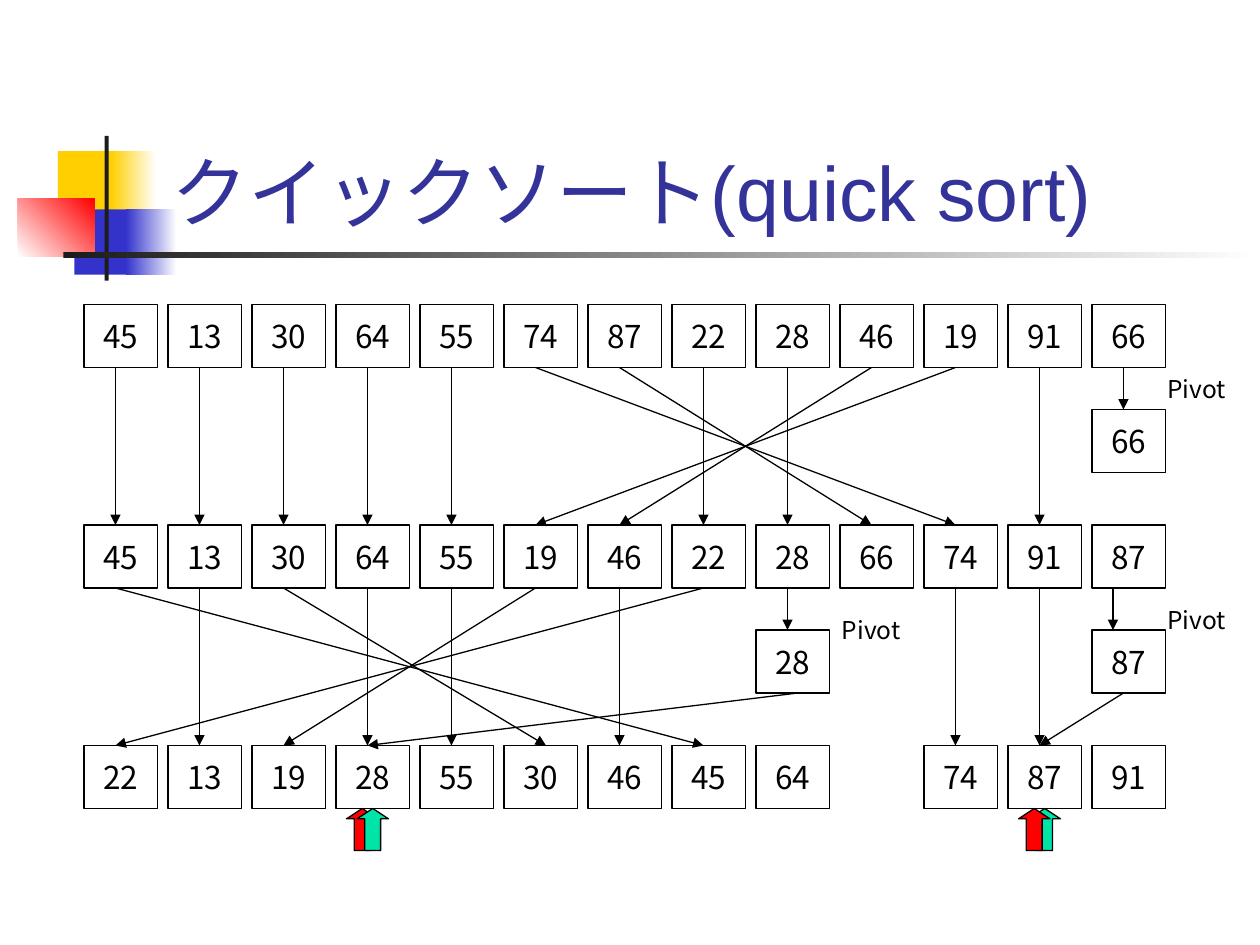
from lxml import etree
from pptx import Presentation
from pptx.dml.color import RGBColor
from pptx.enum.shapes import MSO_CONNECTOR, MSO_SHAPE
from pptx.enum.text import MSO_ANCHOR, MSO_AUTO_SIZE, PP_ALIGN
from pptx.oxml.ns import qn
from pptx.util import Cm, Pt

RECTANGLE = MSO_SHAPE.RECTANGLE
UP_ARROW = MSO_SHAPE.UP_ARROW
STRAIGHT = MSO_CONNECTOR.STRAIGHT
MIDDLE, BOTTOM = MSO_ANCHOR.MIDDLE, MSO_ANCHOR.BOTTOM
LEFT, CENTER = PP_ALIGN.LEFT, PP_ALIGN.CENTER
NO_AUTOFIT, FIT_SHAPE = MSO_AUTO_SIZE.NONE, MSO_AUTO_SIZE.SHAPE_TO_FIT_TEXT

THEME = {
    "title_font": "Arial",
    "body_font": "Noto Sans CJK JP",
    "title_size": Pt(44),
    "number_size": Pt(18),
    "label_size": Pt(14),
    "line_width": Pt(0.75),
    "title": RGBColor.from_string("333399"),
    "ink": RGBColor.from_string("000000"),
    "white": RGBColor.from_string("FFFFFF"),
    "yellow": RGBColor.from_string("FFCF01"),
    "blue": RGBColor.from_string("3333CC"),
    "red": RGBColor.from_string("FF0000"),
    "green": RGBColor.from_string("00E4A8"),
    "bar": RGBColor.from_string("1C1C1C"),
}

GRID = 2.54 / 12
FIRST_LEFT, COLUMN_PITCH = 8, 8
BOX_WIDTH, BOX_HEIGHT = 7, 6
ARROW_INSET = 3
ROW_TOPS = [29, 50, 71]
PIVOT_TOPS = [39, 60]


def add_block(kind, left, top, width, height, fill=None, outlined=False):
    shape = slide.shapes.add_shape(kind, Cm(left), Cm(top), Cm(width), Cm(height))
    shape.shadow.inherit = False
    if fill:
        shape.fill.solid()
        shape.fill.fore_color.rgb = THEME[fill]
    else:
        shape.fill.background()
    if outlined:
        shape.line.color.rgb = THEME["ink"]
        shape.line.width = THEME["line_width"]
    else:
        shape.line.fill.background()
    return shape


def add_text(shape, text, font, size, color, alignment):
    paragraph = shape.text_frame.paragraphs[0]
    paragraph.alignment = alignment
    run = paragraph.add_run()
    run.text = text
    run.font.name = THEME[font]
    run.font.size = THEME[size]
    run.font.color.rgb = THEME[color]


presentation = Presentation()
presentation.slide_width = Cm(25.4)
presentation.slide_height = Cm(19.05)
slide = presentation.slides.add_slide(presentation.slide_layouts[5])

decorations = [
    (1.17, 3.05, 1.22, 1.32, "yellow", None, 0),
    (2.24, 3.05, 0.91, 1.32, "yellow", "white", 0),
    (1.5, 4.22, 1.17, 1.32, "blue", None, 0),
    (2.54, 4.22, 1.02, 1.32, "blue", "white", 0),
    (0.36, 4.01, 1.55, 1.17, "white", "red", 45),
    (2.11, 2.74, 0.08, 2.92, "bar", None, 0),
    (1.28, 5.08, 24.12, 0.13, "bar", "white", 0),
]
for left, top, width, height, start, end, angle in decorations:
    shape = add_block(RECTANGLE, left, top, width, height, start)
    if end:
        shape.fill.gradient()
        shape.fill.gradient_angle = angle
        for stop, color in zip(shape.fill.gradient_stops, (start, end)):
            stop.color.rgb = THEME[color]

title = slide.shapes.title
title.left, title.top, title.width, title.height = Cm(3.2), Cm(1.73), Cm(21.64), Cm(3.17)
title.text_frame.vertical_anchor = BOTTOM
title.text_frame.auto_size = NO_AUTOFIT
add_text(title, "クイックソート(quick sort)", "title_font", "title_size", "title", LEFT)
slide.shapes._spTree.append(title._element)

array_states = [
    [45, 13, 30, 64, 55, 74, 87, 22, 28, 46, 19, 91, 66],
    [45, 13, 30, 64, 55, 19, 46, 22, 28, 66, 74, 91, 87],
    [22, 13, 19, 28, 55, 30, 46, 45, 64, None, 74, 87, 91],
]
cells = [
    (column, top, value)
    for top, values in zip(ROW_TOPS, array_states)
    for column, value in enumerate(values)
    if value is not None
]
cells += [(12, PIVOT_TOPS[0], 66), (8, PIVOT_TOPS[1], 28), (12, PIVOT_TOPS[1], 87)]
for column, top, value in cells:
    left = FIRST_LEFT + column * COLUMN_PITCH
    box = add_block(RECTANGLE, left * GRID, top * GRID, BOX_WIDTH * GRID, BOX_HEIGHT * GRID, outlined=True)
    box.text_frame.word_wrap = False
    box.text_frame.vertical_anchor = MIDDLE
    add_text(box, str(value), "body_font", "number_size", "ink", CENTER)

for left, top in [(110, 35), (110, 57), (79, 58)]:
    label = slide.shapes.add_textbox(Cm(left * GRID), Cm(top * GRID), Cm(1.75), Cm(0.84))
    label.text_frame.word_wrap = False
    label.text_frame.auto_size = FIT_SHAPE
    add_text(label, "Pivot", "body_font", "label_size", "ink", LEFT)

moves = [
    {0: 0, 1: 1, 2: 2, 3: 3, 4: 4, 5: 10, 6: 9, 7: 7, 8: 8, 9: 6, 10: 5, 11: 11},
    {0: 7, 1: 1, 3: 3, 4: 4, 5: 2, 6: 6, 7: 0, 10: 10, 11: 11},
]
first_arrow = FIRST_LEFT + ARROW_INSET
arrows = [
    (first_arrow + source * COLUMN_PITCH, top + BOX_HEIGHT, first_arrow + target * COLUMN_PITCH, next_top)
    for top, next_top, targets in zip(ROW_TOPS, ROW_TOPS[1:], moves)
    for source, target in targets.items()
]
arrows += [
    (27, 56, 52, 71),
    (107, 35, 107, 39),
    (75, 56, 75, 60),
    (106, 56, 106, 60),
    (76, 66, 35, 71),
    (107, 66, 99, 71),
]
for start_x, start_y, end_x, end_y in arrows:
    connector = slide.shapes.add_connector(
        STRAIGHT, Cm(start_x * GRID), Cm(start_y * GRID), Cm(end_x * GRID), Cm(end_y * GRID)
    )
    connector.line.color.rgb = THEME["ink"]
    connector.line.width = THEME["line_width"]
    etree.SubElement(connector.line._get_or_add_ln(), qn("a:tailEnd"), type="triangle")
    etree.SubElement(connector._element.spPr, qn("a:effectLst"))

for left, color in [(33, "red"), (34, "green"), (98, "green"), (97, "red")]:
    marker = add_block(UP_ARROW, left * GRID, 77 * GRID, 3 * GRID, 4 * GRID, color, outlined=True)
    marker.adjustments[0] = 0.5
    marker.adjustments[1] = 0.33

presentation.save("out.pptx")
